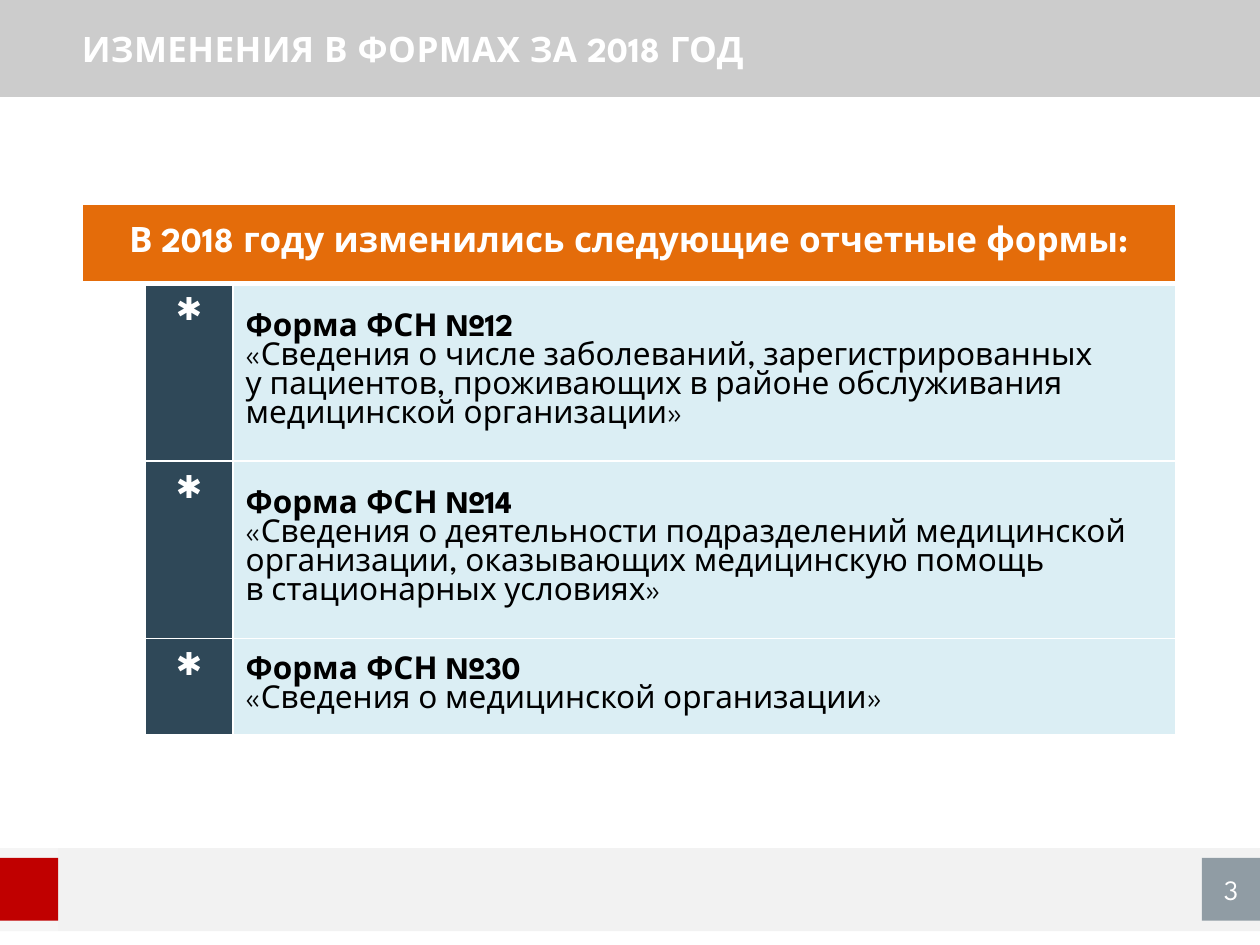
from dataclasses import dataclass

from lxml import etree
from pptx import Presentation
from pptx.dml.color import RGBColor
from pptx.enum.shapes import MSO_SHAPE
from pptx.enum.text import MSO_ANCHOR, PP_ALIGN
from pptx.oxml.ns import qn
from pptx.util import Pt

RECT = MSO_SHAPE.RECTANGLE
MIDDLE = MSO_ANCHOR.MIDDLE
CENTER = PP_ALIGN.CENTER


@dataclass(frozen=True)
class Theme:
    font: str = "League Spartan"
    white: str = "FFFFFF"
    black: str = "000000"
    footer: str = "F2F2F2"
    red: str = "C00000"
    navy: str = "2F4858"
    orange: str = "E46C0A"
    pale: str = "DBEEF4"
    heading: int = 20
    body: int = 18
    number: int = 16


@dataclass(frozen=True)
class Box:
    left: float
    top: float
    width: float
    height: float
    fill: str
    opacity: int = 100


@dataclass(frozen=True)
class Form:
    title: str
    lines: tuple[str, ...]
    height: float


T = Theme()
WIDTH, HEIGHT = 720, 540
MARGIN = 46.8
HEADER_H = 55.4
FOOTER_TOP, FOOTER_H = 484.6, 47.5
TAB_TOP, TAB_W, TAB_H = 490.2, 33.2, 36
TABLE_TOP = 116.6
COLUMNS = (36, 50.4, 538.6)
TITLE_ROW_H = 45.4
THIN, THICK = 1, 3

BANDS = (
    Box(0, FOOTER_TOP, WIDTH, FOOTER_H, T.footer),
    Box(0, 0, WIDTH, HEADER_H, T.black, 20),
    Box(0, FOOTER_TOP, TAB_W, FOOTER_H, T.white, 30),
    Box(0, TAB_TOP, TAB_W, TAB_H, T.red),
)
NUMBER_BOX = Box(WIDTH - TAB_W, TAB_TOP, TAB_W, TAB_H, T.navy, 50)

FORMS = (
    Form("Форма ФСН №12",
         ("«Сведения о числе заболеваний, зарегистрированных",
          "у пациентов, проживающих в районе обслуживания медицинской организации»"),
         101.5),
    Form("Форма ФСН №14",
         ("«Сведения о деятельности подразделений медицинской организации, "
          "оказывающих медицинскую помощь",
          "в стационарных условиях»"),
         101.5),
    Form("Форма ФСН №30", ("«Сведения о медицинской организации»",), 54.7),
)


def rgb(value: str) -> RGBColor:
    return RGBColor.from_string(value)


def write(p, text: str, size: int, color: str, bold: bool = False, align=None) -> None:
    p.add_run().text = text
    p.alignment = align
    p.font.name = T.font
    p.font.size = Pt(size)
    p.font.bold = bold
    p.font.color.rgb = rgb(color)


def add_box(slide, box: Box):
    sp = slide.shapes.add_shape(
        RECT, Pt(box.left), Pt(box.top), Pt(box.width), Pt(box.height))
    sp.shadow.inherit = False
    sp.line.fill.background()
    sp.fill.solid()
    sp.fill.fore_color.rgb = rgb(box.fill)
    if box.opacity < 100:
        color = sp.fill._xPr.find(f".//{qn('a:srgbClr')}")
        etree.SubElement(color, qn("a:alpha"), val=str(box.opacity * 1000))
    return sp


def add_title(slide, text: str) -> None:
    sp = slide.shapes.add_textbox(Pt(MARGIN), 0, Pt(WIDTH - MARGIN), Pt(HEADER_H))
    tf = sp.text_frame
    tf.word_wrap = True
    tf.vertical_anchor = MIDDLE
    tf.margin_left = tf.margin_right = tf.margin_top = tf.margin_bottom = 0
    p = tf.paragraphs[0]
    write(p, text, T.heading, T.white, True)
    p.runs[0].font._element.set("spc", "20")


def style_cell(cell, fill: str, top: float = THIN, bottom: float = THIN) -> None:
    """Give the cell white borders and a solid fill; borders come first in the XML."""
    tc_pr = cell._tc.get_or_add_tcPr()
    for side, width in (("L", THIN), ("R", THIN), ("T", top), ("B", bottom)):
        line = etree.SubElement(tc_pr, qn(f"a:ln{side}"), w=str(Pt(width)))
        solid = etree.SubElement(line, qn("a:solidFill"))
        etree.SubElement(solid, qn("a:srgbClr"), val=T.white)
    cell.fill.solid()
    cell.fill.fore_color.rgb = rgb(fill)


def fill_form_row(table, row: int, form: Form) -> None:
    top = THICK if row == 1 else THIN
    cells = [table.cell(row, col) for col in range(len(COLUMNS))]
    for cell, fill in zip(cells, (T.white, T.navy, T.pale)):
        style_cell(cell, fill, top=top)
    _, mark, text = cells
    mark.margin_top = Pt(8.6)
    write(mark.text_frame.paragraphs[0], "✱", T.body, T.white, align=CENTER)
    text.vertical_anchor = MIDDLE
    tf = text.text_frame
    write(tf.paragraphs[0], form.title, T.body, T.black, True)
    for line in form.lines:
        write(tf.add_paragraph(), line, T.body, T.black)


def add_forms_table(slide, heading: str, forms: tuple[Form, ...]) -> None:
    heights = (TITLE_ROW_H, *(form.height for form in forms))
    table = slide.shapes.add_table(
        len(heights), len(COLUMNS), Pt(MARGIN), Pt(TABLE_TOP),
        Pt(sum(COLUMNS)), Pt(sum(heights))).table
    table.first_row = table.horz_banding = False
    for column, width in zip(table.columns, COLUMNS):
        column.width = Pt(width)
    for row, height in zip(table.rows, heights):
        row.height = Pt(height)
    for cell in table.rows[0].cells:
        style_cell(cell, T.orange, bottom=THICK)
    head = table.cell(0, 0)
    head.merge(table.cell(0, len(COLUMNS) - 1))
    head.vertical_anchor = MIDDLE
    write(head.text_frame.paragraphs[0], heading, T.heading, T.white, True, CENTER)
    for row, form in enumerate(forms, start=1):
        fill_form_row(table, row, form)


def main() -> None:
    prs = Presentation()
    prs.slide_width, prs.slide_height = Pt(WIDTH), Pt(HEIGHT)
    slide = prs.slides.add_slide(prs.slide_layouts[6])
    for band in BANDS:
        add_box(slide, band)
    tf = add_box(slide, NUMBER_BOX).text_frame
    tf.vertical_anchor = MIDDLE
    write(tf.paragraphs[0], "3", T.number, T.white, align=CENTER)
    add_title(slide, "ИЗМЕНЕНИЯ В ФОРМАХ ЗА 2018 ГОД")
    add_forms_table(slide, "В 2018 году изменились следующие отчетные формы:", FORMS)
    prs.save("out.pptx")


if __name__ == "__main__":
    main()
